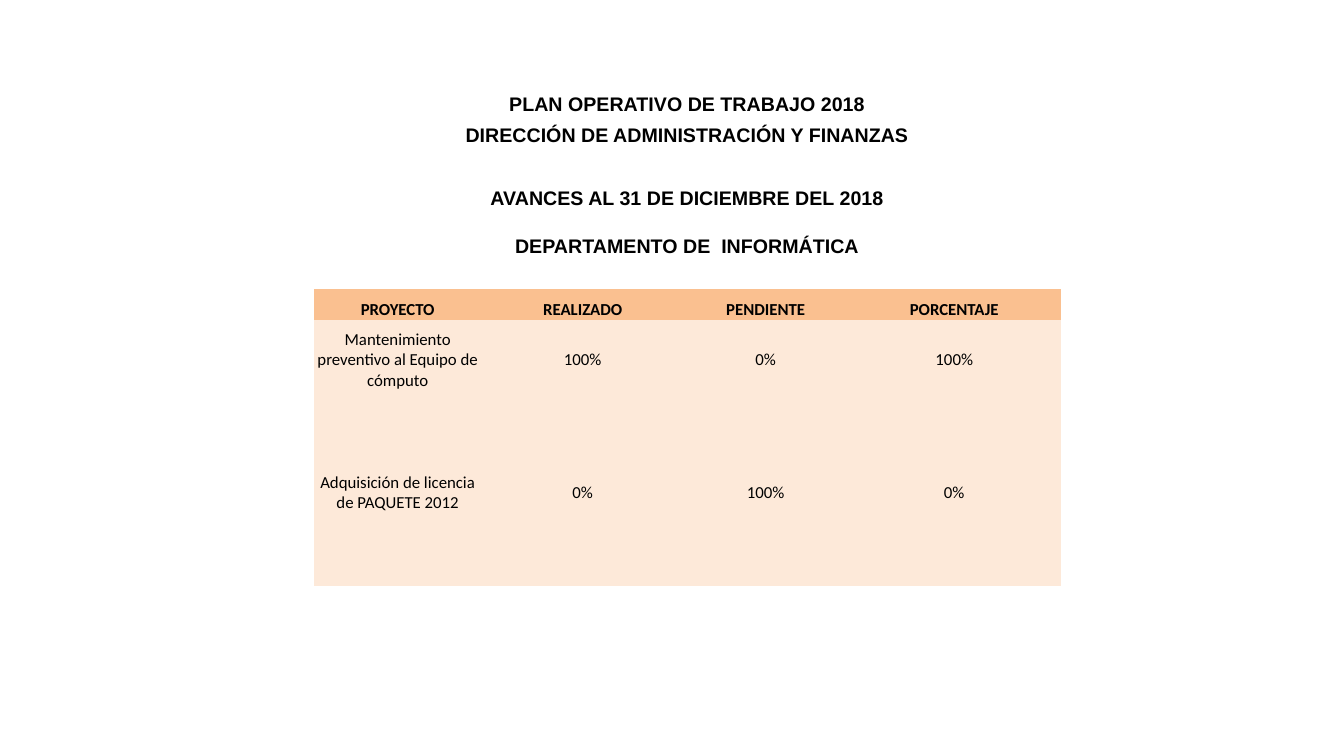
from pptx import Presentation
from pptx.dml.color import RGBColor
from pptx.enum.text import MSO_ANCHOR, PP_ALIGN
from pptx.util import Inches, Pt

BOTTOM, MIDDLE = MSO_ANCHOR.BOTTOM, MSO_ANCHOR.MIDDLE
CENTER = PP_ALIGN.CENTER

COLORS = {"text": "000000", "title": "FFFFFF", "header": "FAC090", "body": "FDE9D9"}
NO_STYLE_NO_GRID = "{2D5ABB26-0587-4C30-8999-92F81FD0307C}"
STYLES = {
    "title": {"anchor": BOTTOM, "font": {"name": "Arial", "size": Pt(14), "bold": True}},
    "header": {"anchor": BOTTOM, "font": {"name": "Calibri", "size": Pt(12), "bold": True}},
    "body": {"anchor": MIDDLE, "font": {"name": "Calibri", "size": Pt(12), "bold": False}},
}
ROWS = [
    ("title", 0.31, ["PLAN OPERATIVO DE TRABAJO 2018"]),
    ("title", 0.31, ["DIRECCIÓN DE ADMINISTRACIÓN Y FINANZAS"]),
    ("title", 0.31, []),
    ("title", 0.31, ["AVANCES AL 31 DE DICIEMBRE DEL 2018"]),
    ("title", 0.48, ["DEPARTAMENTO DE  INFORMÁTICA"]),
    ("title", 0.31, []),
    ("header", 0.31, ["PROYECTO", "REALIZADO", "PENDIENTE", "PORCENTAJE"]),
    ("body", 0.79, ["Mantenimiento preventivo al Equipo de cómputo", "100%", "0%", "100%"]),
    ("body", 1.84, ["Adquisición de licencia de PAQUETE 2012", "0%", "100%", "0%"]),
]
COLUMN_WIDTHS = [1.67, 2, 1.63, 2.11]
TABLE_LEFT, TABLE_TOP = 3.11, 0.84
MARGINS = ("margin_left", "margin_right", "margin_top", "margin_bottom")


def format_cell(cell, kind):
    cell.fill.solid()
    cell.fill.fore_color.rgb = RGBColor.from_string(COLORS[kind])
    cell.vertical_anchor = STYLES[kind]["anchor"]
    for margin in MARGINS:
        setattr(cell, margin, 0)


def write_cell(cell, text, kind):
    paragraph = cell.text_frame.paragraphs[0]
    paragraph.alignment = CENTER
    run = paragraph.add_run()
    run.text = text
    for attribute, value in STYLES[kind]["font"].items():
        setattr(run.font, attribute, value)
    run.font.color.rgb = RGBColor.from_string(COLORS["text"])


def add_plan_table(slide):
    height = sum(row_height for _, row_height, _ in ROWS)
    frame = slide.shapes.add_table(
        len(ROWS), len(COLUMN_WIDTHS), Inches(TABLE_LEFT), Inches(TABLE_TOP),
        Inches(sum(COLUMN_WIDTHS)), Inches(height))
    table = frame.table
    table.first_row = table.horz_banding = False
    table._tbl.tblPr[0].text = NO_STYLE_NO_GRID
    for column, width in zip(table.columns, COLUMN_WIDTHS):
        column.width = Inches(width)
    for row_index, (kind, row_height, texts) in enumerate(ROWS):
        row = table.rows[row_index]
        row.height = Inches(row_height)
        for cell in row.cells:
            format_cell(cell, kind)
        if len(texts) == 1:
            row.cells[0].merge(table.cell(row_index, len(COLUMN_WIDTHS) - 1))
        for cell, text in zip(row.cells, texts):
            write_cell(cell, text, kind)


def main():
    presentation = Presentation()
    presentation.slide_width = Inches(13.33)
    presentation.slide_height = Inches(7.5)
    slide = presentation.slides.add_slide(presentation.slide_layouts[6])
    add_plan_table(slide)
    presentation.save("out.pptx")


if __name__ == "__main__":
    main()
